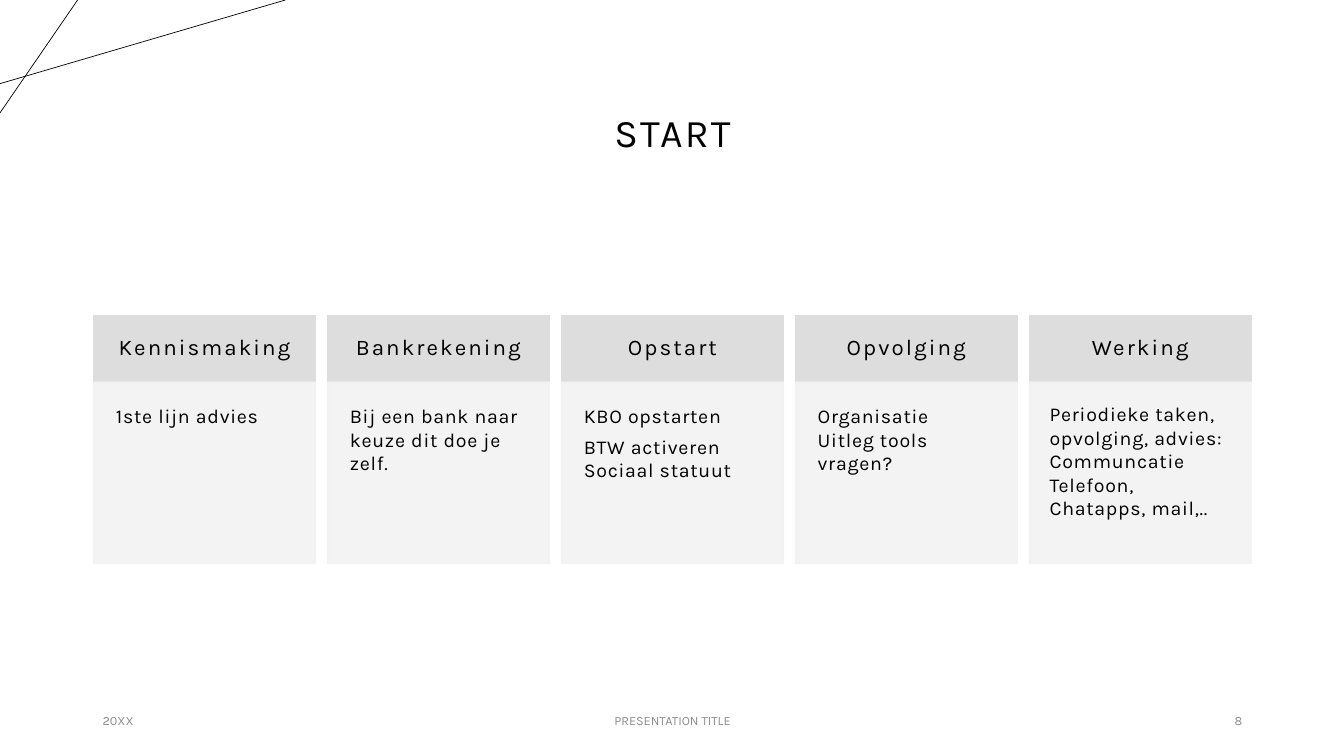
import pptx
import pptx.util
import pptx.dml.color
import pptx.enum.shapes
import pptx.enum.text
import pptx.oxml
import pptx.oxml.ns
from dataclasses import dataclass

PX = 9144  # EMU per px, 100 px to the inch
ALIGN = pptx.enum.text.PP_ALIGN
ANCHOR = pptx.enum.text.MSO_ANCHOR


@dataclass(frozen=True)
class Theme:
    font: str = "Karla"
    ink: str = "000000"
    muted: str = "8C8C8C"
    head: str = "DDDDDD"
    body: str = "F2F2F2"
    title_size: int = 28
    head_size: int = 16
    body_size: int = 14
    foot_size: int = 9


THEME = Theme()

# Heading, paragraphs (each a list of lines), inner margin
CARDS = [
    ("Kennismaking", [["1ste lijn advies"]], 22),
    ("Bankrekening", [["Bij een bank naar keuze dit doe je zelf."]], 22),
    ("Opstart", [["KBO opstarten"], ["BTW activeren", "Sociaal statuut"]], 22),
    ("Opvolging", [["Organisatie", "Uitleg tools", "vragen?"]], 22),
    ("Werking", [["Periodieke taken, opvolging, advies:", "Communcatie",
                  "Telefoon, Chatapps, mail,.."]], 20),
]


def color(code):
    return pptx.dml.color.RGBColor.from_string(code)


def write(shape, paras, size, code=THEME.ink, align=ALIGN.LEFT,
          anchor=ANCHOR.TOP, pad=(10, 5), track=0, lead=1.0):
    """Fill a shape with paragraphs, each a list of lines."""
    frame = shape.text_frame
    frame.word_wrap = True
    frame.vertical_anchor = anchor
    frame.margin_left = frame.margin_right = pad[0] * PX
    frame.margin_top = frame.margin_bottom = pad[1] * PX
    for i, lines in enumerate(paras):
        para = frame.add_paragraph() if i else frame.paragraphs[0]
        para.alignment = align
        para.line_spacing = lead
        para.space_after = pptx.util.Pt(5 if i < len(paras) - 1 else 0)
        for j, line in enumerate(lines):
            if j:
                para.add_line_break()
            run = para.add_run()
            run.text = line
            run.font.name = THEME.font
            run.font.size = pptx.util.Pt(size)
            run.font.color.rgb = color(code)
            if track:
                run.font._element.set("spc", str(track))


def label(slide, box, text, size, **style):
    shape = slide.shapes.add_textbox(*[n * PX for n in box])
    write(shape, [[text]], size, **style)


def panel(slide, box, code, alpha=100):
    kind = pptx.enum.shapes.MSO_SHAPE.RECTANGLE
    shape = slide.shapes.add_shape(kind, *[n * PX for n in box])
    shape.shadow.inherit = False
    shape.fill.solid()
    shape.fill.fore_color.rgb = color(code)
    shape.line.color.rgb = color(code)
    shape.line.width = pptx.util.Pt(1)
    if alpha < 100:
        for tint in shape.element.spPr.iter(pptx.oxml.ns.qn("a:srgbClr")):
            node = pptx.oxml.parse_xml(
                f'<a:alpha {pptx.oxml.ns.nsdecls("a")} val="{alpha * 1000}"/>')
            tint.append(node)
    return shape


def corner(slide, box):
    """Two thin lines that cross in the top left corner."""
    left, top, wide, high = box
    kind = pptx.enum.shapes.MSO_CONNECTOR.STRAIGHT
    for start, end in [((0, 83), (wide, 0)), ((77, 0), (0, high))]:
        line = slide.shapes.add_connector(
            kind, (left + start[0]) * PX, (top + start[1]) * PX,
            (left + end[0]) * PX, (top + end[1]) * PX)
        line.line.color.rgb = color(THEME.ink)
        line.line.width = pptx.util.Pt(0.5)
        line.element.spPr.append(pptx.oxml.parse_xml(
            f'<a:effectLst {pptx.oxml.ns.nsdecls("a")}/>'))


def card(slide, box, head, paras, pad):
    """A heading bar over a pale text panel."""
    left, top, wide, high = box
    bar = 66
    shape = panel(slide, (left, top, wide, bar), THEME.head)
    write(shape, [[head]], THEME.head_size, align=ALIGN.CENTER,
          anchor=ANCHOR.MIDDLE, pad=(17, 17), track=150, lead=0.9)
    shape = panel(slide, (left, top + bar, wide, high - bar), THEME.body, 90)
    write(shape, paras, THEME.body_size, pad=(pad, pad), track=50)


def steps(slide, box):
    """Cards of equal width with equal gaps."""
    left, top, wide, high = box
    gap = 12
    each = (wide - gap * (len(CARDS) - 1)) // len(CARDS)
    for i, (head, paras, pad) in enumerate(CARDS):
        card(slide, (left + i * (each + gap), top, each, high),
             head, paras, pad)


def footer(slide, box):
    """Date, title and page number along the bottom."""
    left, top, wide, high = box
    side, mid = 300, 450
    parts = [
        (left, side, "20XX", ALIGN.LEFT),
        (left + (wide - mid) // 2, mid, "PRESENTATION TITLE", ALIGN.CENTER),
        (left + wide - side, side, "8", ALIGN.RIGHT),
    ]
    for at, span, text, align in parts:
        label(slide, (at, top, span, high), text, THEME.foot_size,
              code=THEME.muted, align=align, anchor=ANCHOR.MIDDLE)


def main():
    deck = pptx.Presentation()
    deck.slide_width = 1333 * PX
    deck.slide_height = 750 * PX
    slide = deck.slides.add_slide(deck.slide_layouts[6])
    corner(slide, (0, 0, 283, 112))
    label(slide, (92, 15, 1150, 145), "START", THEME.title_size,
          align=ALIGN.CENTER, anchor=ANCHOR.BOTTOM, track=150, lead=0.9)
    steps(slide, (93, 313, 1148, 246))
    footer(slide, (92, 695, 1150, 40))
    deck.save("out.pptx")


if __name__ == "__main__":
    main()
